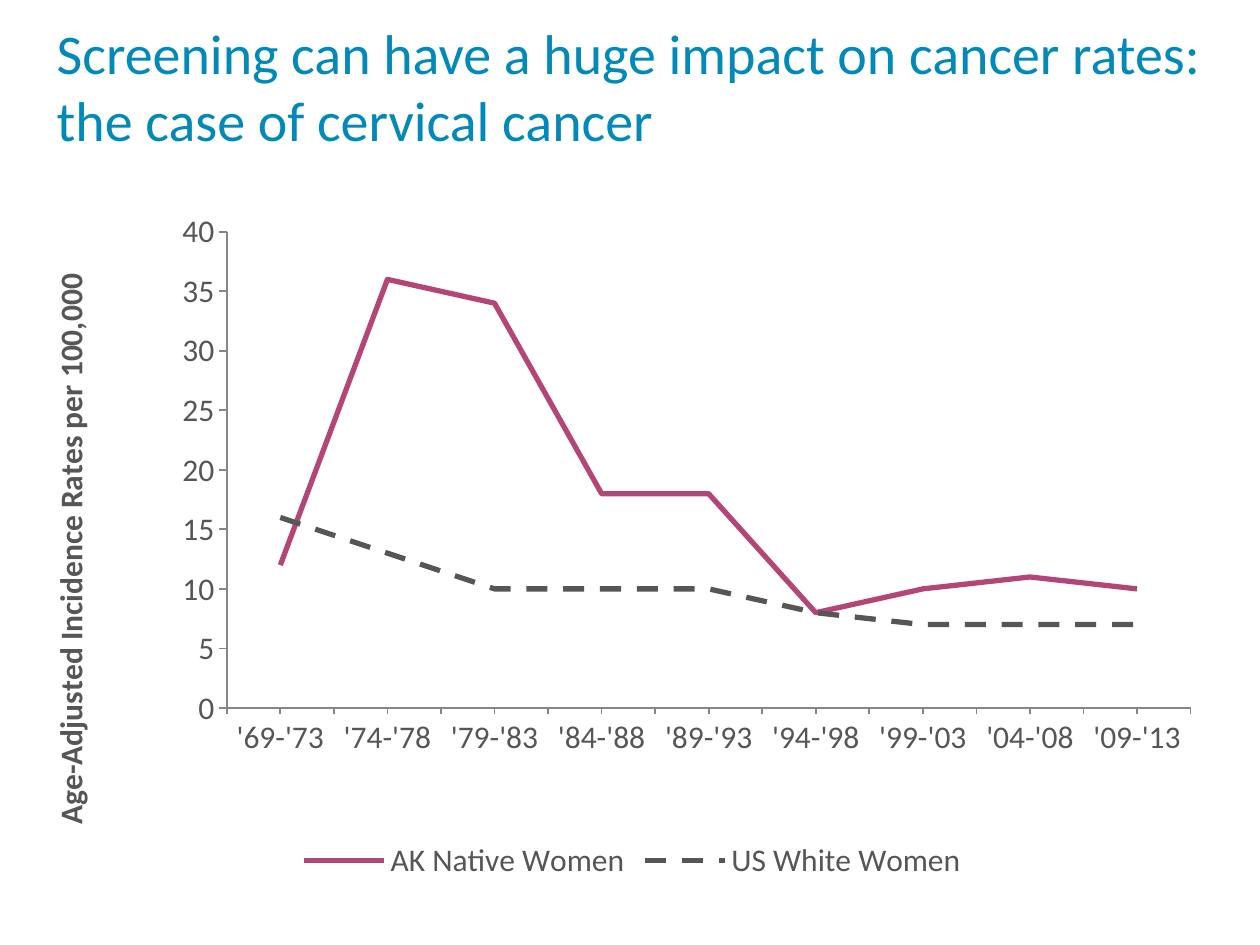
from lxml import etree
from pptx import Presentation
from pptx import util as u
from pptx.chart import data as cd
from pptx.dml import color as col
from pptx.enum import chart as ec, dml, text
from pptx.oxml import ns

COLORS = {"title": "0089B9", "native": "B44677", "white": "565656",
          "text": "565656", "axis": "868686"}
FACE = "Calibri"
WIDE, HIGH = 9.56, 5.67  # chart size in inches
SPANS = ["'69-'73", "'74-'78", "'79-'83", "'84-'88", "'89-'93",
         "'94-'98", "'99-'03", "'04-'08", "'09-'13"]
RATES = [
    ("AK Native Women", "native", dml.MSO_LINE.SOLID,
     [12, 36, 34, 18, 18, 8, 10, 11, 10]),
    ("US White Women", "white", dml.MSO_LINE.DASH,
     [16, 13, 10, 10, 10, 8, 7, 7, 7]),
]


def rgb(name):
    return col.RGBColor.from_string(COLORS[name])


def put(item, **values):
    for name, value in values.items():
        setattr(item, name, value)


def style(font, size, tint, bold=False):
    put(font, name=FACE, size=u.Pt(size), bold=bold)
    font.color.rgb = rgb(tint)


def place(item, left, top, width, height):
    put(item, left=u.Inches(left), top=u.Inches(top),
        width=u.Inches(width), height=u.Inches(height))


def layout(parent, before, **spots):
    """Fix a chart part at given places within the chart."""
    for old in parent.findall(ns.qn("c:layout")):
        parent.remove(old)
    node = etree.Element(ns.qn("c:layout"))
    man = etree.SubElement(node, ns.qn("c:manualLayout"))
    for tag, val in spots.items():
        etree.SubElement(man, ns.qn("c:" + tag)).set("val", str(val))
    parent.find(ns.qn(before)).addprevious(node)


def add_title(slide):
    title = slide.shapes.title
    place(title, 0.35, 0.37, 9.33, 0.62)
    frame = title.text_frame
    put(frame, word_wrap=True, auto_size=text.MSO_AUTO_SIZE.NONE,
        vertical_anchor=text.MSO_ANCHOR.MIDDLE,
        text="Screening can have a huge impact on cancer rates: "
             "the case of cervical cancer")
    para = frame.paragraphs[0]
    para.alignment = text.PP_ALIGN.LEFT
    style(para.font, 32, "title")


def format_axes(chart):
    span, rate = chart.category_axis, chart.value_axis
    out, none = ec.XL_TICK_MARK.OUTSIDE, ec.XL_TICK_MARK.NONE
    for axis, major, minor in ((span, none, out), (rate, out, none)):
        put(axis, has_major_gridlines=False,
            major_tick_mark=major, minor_tick_mark=minor)
        axis.format.line.color.rgb = rgb("axis")
        axis.format.line.width = u.Pt(1)
    put(rate, minimum_scale=0, maximum_scale=40, major_unit=5)
    put(rate.tick_labels, number_format="0", number_format_is_linked=False)
    name = rate.axis_title
    name.text_frame.text = "Age-Adjusted Incidence Rates per 100,000"
    style(name.text_frame.paragraphs[0].runs[0].font, 18, "text", True)
    body = name._element.find(".//" + ns.qn("a:bodyPr"))
    body.set("rot", "-5400000")
    body.set("vert", "horz")
    layout(name._element, "c:overlay", xMode="edge", yMode="edge",
           x=0.1 / WIDE, y=0.77 / HIGH)


def add_rates(slide):
    data = cd.CategoryChartData()
    data.categories = SPANS
    for name, _, _, vals in RATES:
        data.add_series(name, vals)
    box = map(u.Inches, (0.24, 1.36, WIDE, HIGH))
    chart = slide.shapes.add_chart(ec.XL_CHART_TYPE.LINE, *box, data).chart
    put(chart, has_title=False, has_legend=True)
    style(chart.font, 18, "text")
    put(chart.legend, position=ec.XL_LEGEND_POSITION.BOTTOM,
        include_in_layout=False)
    format_axes(chart)
    plot = chart.plots[0]
    plot.vary_by_categories = False
    for line, (_, tint, dash, _) in zip(plot.series, RATES):
        line.smooth = False
        line.marker.style = ec.XL_MARKER_STYLE.NONE
        put(line.format.line, width=u.Pt(3), dash_style=dash)
        line.format.line.color.rgb = rgb(tint)
    area = chart._chartSpace.find(".//" + ns.qn("c:plotArea"))
    layout(area, "c:lineChart", layoutTarget="inner", xMode="edge",
           yMode="edge", x=1.56 / WIDE, y=0.48 / HIGH,
           w=7.65 / WIDE, h=3.78 / HIGH)


def main():
    deck = Presentation()
    put(deck, slide_width=u.Inches(10), slide_height=u.Inches(7.5))
    slide = deck.slides.add_slide(deck.slide_layouts[5])
    add_title(slide)
    add_rates(slide)
    deck.save("out.pptx")


if __name__ == "__main__":
    main()
